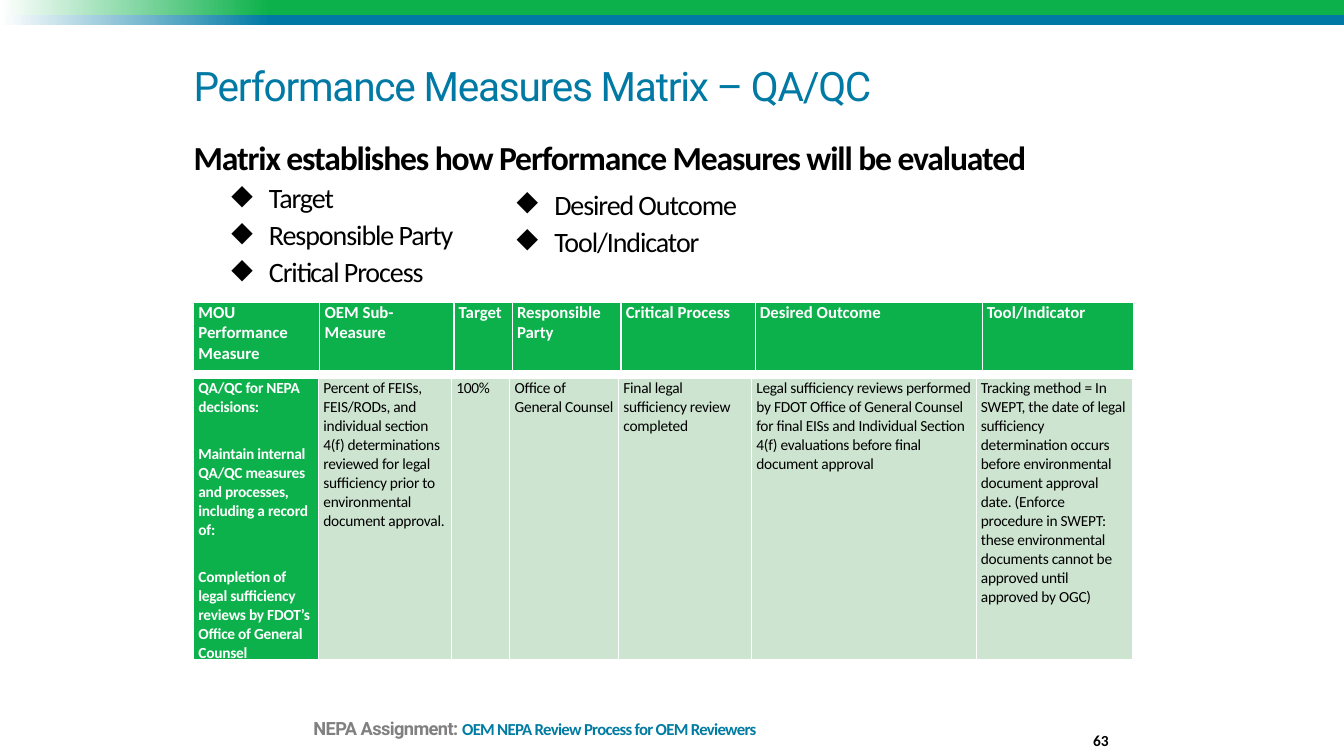
from pptx import Presentation
from pptx.dml.color import RGBColor as RGB
from pptx.enum.shapes import MSO_SHAPE as Shape
from pptx.enum.text import MSO_ANCHOR as Anchor, PP_ALIGN as Align
from pptx.oxml.ns import qn
from pptx.util import Cm, Pt
from lxml.etree import SubElement as Sub

GREEN = RGB(0x0D, 0xB1, 0x4B)
BLUE = RGB(0x00, 0x7A, 0xA4)
NAVY = RGB(0x00, 0x7B, 0xA2)
PALE = RGB(0xCC, 0xE4, 0xD0)
GRAY = RGB(0x80, 0x80, 0x80)
BLACK = RGB(0, 0, 0)
WHITE = RGB(0xFF, 0xFF, 0xFF)

WIDTH, HEIGHT = 33.87, 19.05
LEFT = 4.88

HEADS = ["MOU Performance Measure", "OEM Sub-Measure", "Target",
         "Responsible Party", "Critical Process", "Desired Outcome",
         "Tool/Indicator"]
HEAD_COLS = [3.18, 3.38, 1.47, 2.74, 3.38, 5.72, 3.81]
BODY = [
    ["QA/QC for NEPA decisions:",
     "Maintain internal QA/QC measures and processes, including a record of:",
     "Completion of legal sufficiency reviews by FDOT’s Office of General "
     "Counsel"],
    ["Percent of FEISs, FEIS/RODs, and individual section 4(f) "
     "determinations reviewed for legal sufficiency prior to environmental "
     "document approval."],
    ["100%"],
    ["Office of General Counsel"],
    ["Final legal sufficiency review completed"],
    ["Legal sufficiency reviews performed by FDOT Office of General Counsel "
     "for final EISs and Individual Section 4(f) evaluations before final "
     "document approval"],
    ["Tracking method = In SWEPT, the date of legal sufficiency "
     "determination occurs before environmental document approval date. "
     "(Enforce procedure in SWEPT: these environmental documents cannot be "
     "approved until approved by OGC)"],
]
BODY_COLS = [3.15, 3.35, 1.47, 2.74, 3.35, 5.66, 3.94]


def write(para, text, size=20, font="Calibri", color=BLACK, bold=False,
          track=0, line=None, after=0, align=None, bullet=False):
    """Add a formatted run, and set the format of its paragraph."""
    if bullet:
        props = para._p.get_or_add_pPr()
        props.set("marL", str(Cm(1.9)))
        props.set("indent", str(Cm(-0.95)))
        Sub(props, qn("a:buChar")).set("char", "◆")
    if line:
        para.line_spacing = line
    if align is not None:
        para.alignment = align
    para.space_after = Pt(after)
    run = para.add_run()
    run.text = text
    run.font.size, run.font.name, run.font.bold = Pt(size), font, bold
    run.font.color.rgb = color
    if track:
        run._r.get_or_add_rPr().set("spc", str(round(track * 100)))


def next_para(frame, first):
    return frame.paragraphs[0] if first else frame.add_paragraph()


def add_box(slide, x, y, w, h, anchor=Anchor.TOP):
    frame = slide.shapes.add_textbox(Cm(x), Cm(y), Cm(w), Cm(h)).text_frame
    frame.word_wrap = True
    frame.vertical_anchor = anchor
    frame.margin_left = frame.margin_right = 0
    frame.margin_top = frame.margin_bottom = 0
    return frame


def add_band(slide, y, h, color):
    band = slide.shapes.add_shape(Shape.RECTANGLE, 0, Cm(y), Cm(WIDTH), Cm(h))
    band.shadow.inherit = False
    band.line.fill.background()
    band.fill.gradient()
    band.fill.gradient_angle = 0
    stops = band.fill.gradient_stops
    for stop, place, tint in zip(stops, (0, 0.2), (WHITE, color)):
        stop.position = place
        stop.color.rgb = tint


def add_list(frame, items, first):
    for i, item in enumerate(items):
        write(next_para(frame, first and i == 0), item, track=-0.8,
              line=0.85, after=6, bullet=True)


def set_edges(cell, base):
    """Draw white cell borders; base is the width of the bottom one."""
    props = cell._tc.get_or_add_tcPr()
    for i, (side, width) in enumerate(zip("LRTB", (1, 1, 1, base))):
        edge = props.makeelement(qn("a:ln" + side), {"w": str(Pt(width))})
        fill = Sub(edge, qn("a:solidFill"))
        Sub(fill, qn("a:srgbClr")).set("val", str(WHITE))
        props.insert(i, edge)


def add_row(slide, y, h, widths, texts, fills, formats, base=1):
    """Add a table of one row; each text is a list of paragraphs."""
    grid = slide.shapes.add_table(1, len(widths), Cm(LEFT), Cm(y),
                                  Cm(sum(widths)), Cm(h)).table
    grid.first_row = grid.horz_banding = False
    grid.rows[0].height = Cm(h)
    for i, (width, paras) in enumerate(zip(widths, texts)):
        grid.columns[i].width = Cm(width)
        cell = grid.cell(0, i)
        cell.margin_left = cell.margin_right = Cm(0.12)
        cell.margin_top = cell.margin_bottom = 0
        cell.fill.solid()
        cell.fill.fore_color.rgb = fills[i]
        set_edges(cell, base)
        for j, text in enumerate(paras):
            gap = 20 if j < len(paras) - 1 else 0
            write(next_para(cell.text_frame, j == 0), text, after=gap,
                  **formats[i])


def main():
    deck = Presentation()
    deck.slide_width, deck.slide_height = Cm(WIDTH), Cm(HEIGHT)
    slide = deck.slides.add_slide(deck.slide_layouts[6])

    # Top bands
    add_band(slide, 0, 0.38, GREEN)
    add_band(slide, 0.38, 0.25, BLUE)

    # Title
    title = add_box(slide, LEFT, 0.46, 22.86, 2.29, Anchor.BOTTOM)
    write(title.paragraphs[0], "Performance Measures Matrix – QA/QC",
          size=29, font="Roboto", color=BLUE, track=-0.9, line=0.8)

    # Lead line and the two lists
    lead = add_box(slide, LEFT, 3.61, 23.7, 3.9)
    write(lead.paragraphs[0],
          "Matrix establishes how Performance Measures will be evaluated",
          size=24, bold=True, track=-0.8, line=0.85, after=6)
    add_list(lead, ["Target", "Responsible Party", "Critical Process"], False)
    side = add_box(slide, 12.07, 4.85, 14.17, 2)
    add_list(side, ["Desired Outcome", "Tool/Indicator"], True)

    # Matrix: heading row, then body row
    count = len(HEADS)
    head = dict(size=12, color=WHITE, bold=True)
    add_row(slide, 7.62, 1.75, HEAD_COLS, [[text] for text in HEADS],
            [GREEN] * count, [head] * count, base=3)
    key = dict(size=11, color=WHITE, bold=True, track=-0.2)
    plain = dict(size=11, track=-0.2)
    add_row(slide, 9.53, 7.1, BODY_COLS, BODY,
            [GREEN] + [PALE] * (count - 1), [key] + [plain] * (count - 1))

    # Footer and page number
    foot = add_box(slide, 7.9, 17.42, 18.31, 1.19, Anchor.BOTTOM)
    para = foot.paragraphs[0]
    write(para, "NEPA Assignment: ", size=13, font="Roboto", color=GRAY,
          bold=True, track=-0.4)
    write(para, "OEM NEPA Review Process for OEM Reviewers", size=12,
          color=NAVY, bold=True, track=-0.5, line=0.8, after=12)
    page = add_box(slide, 25.96, 17.86, 1.98, 1.02, Anchor.BOTTOM)
    write(page.paragraphs[0], "63", size=11, bold=True, align=Align.RIGHT)

    deck.save("out.pptx")


if __name__ == "__main__":
    main()
